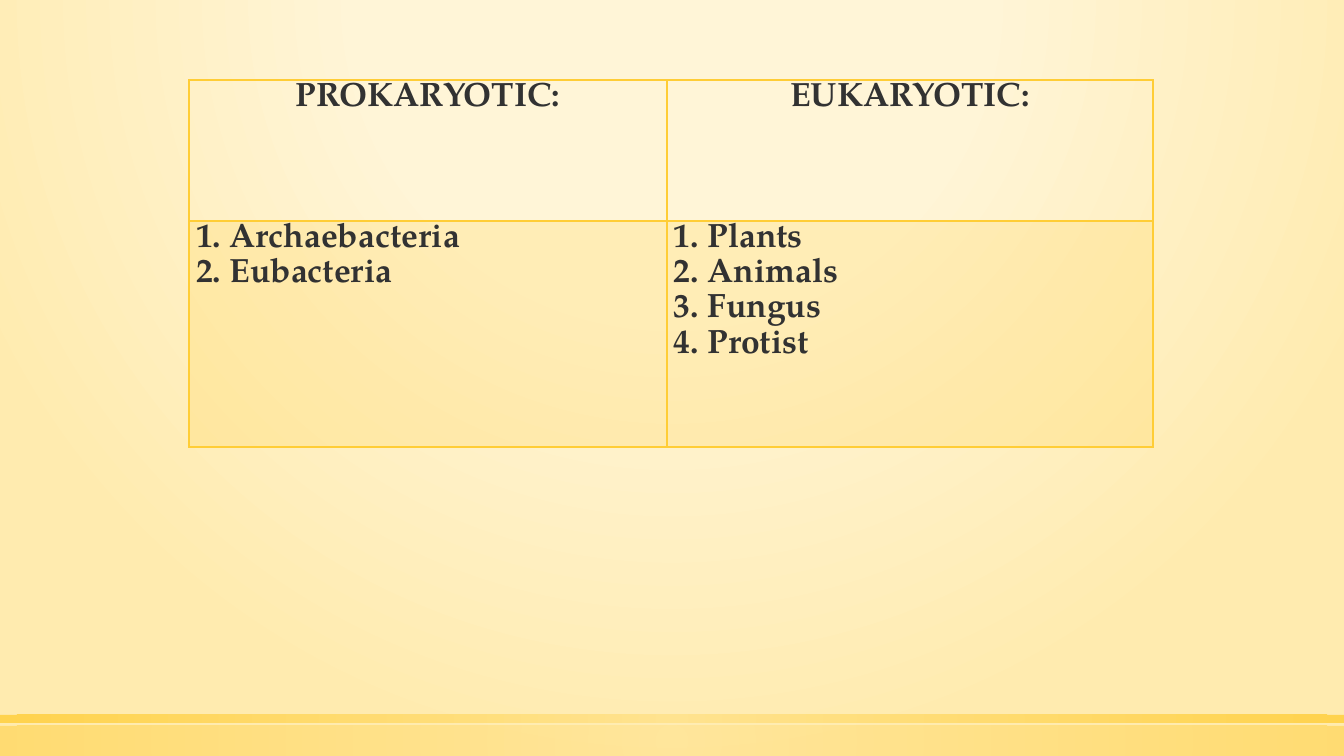
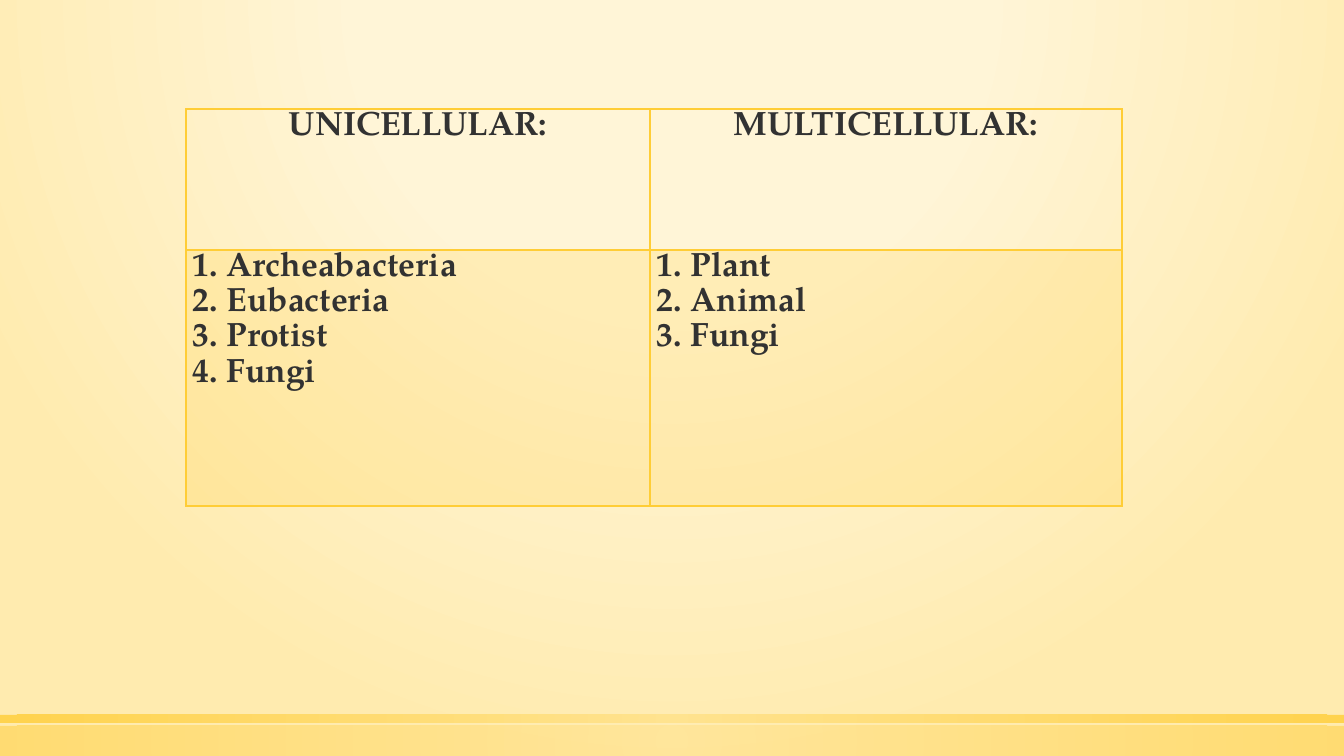
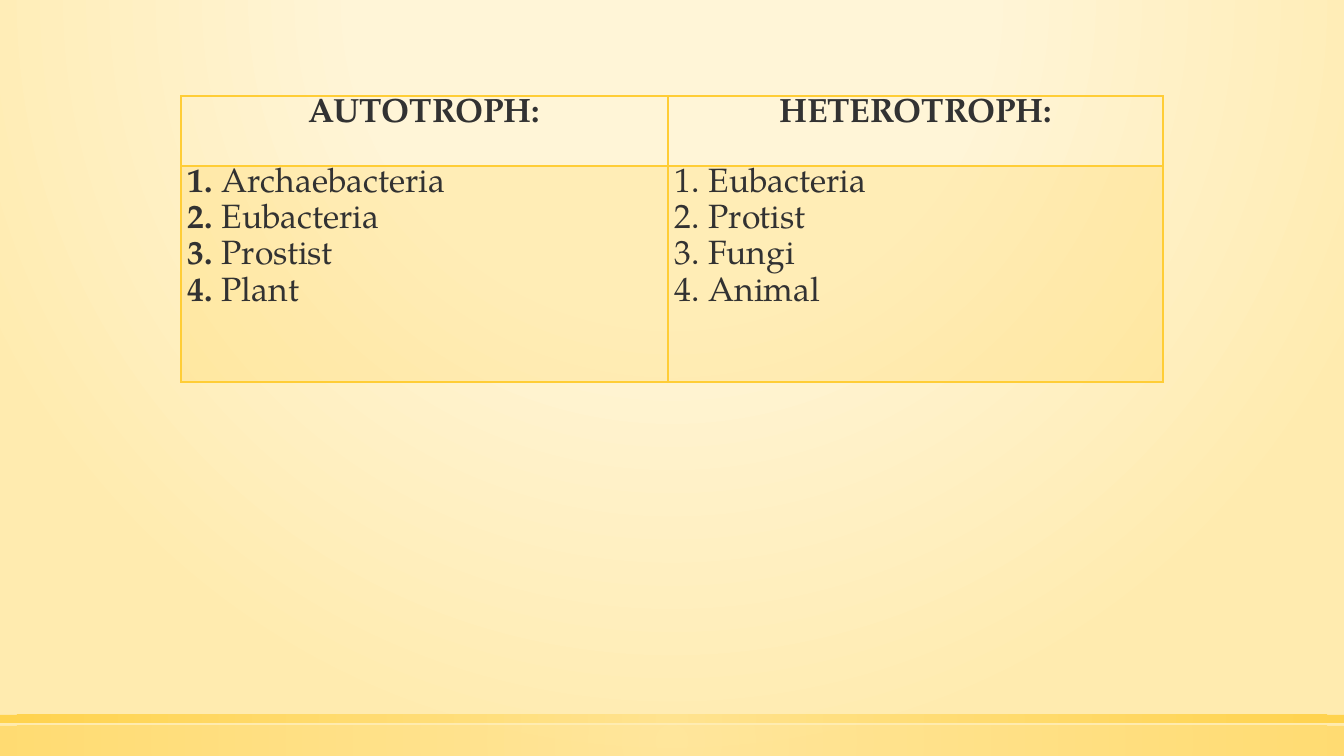
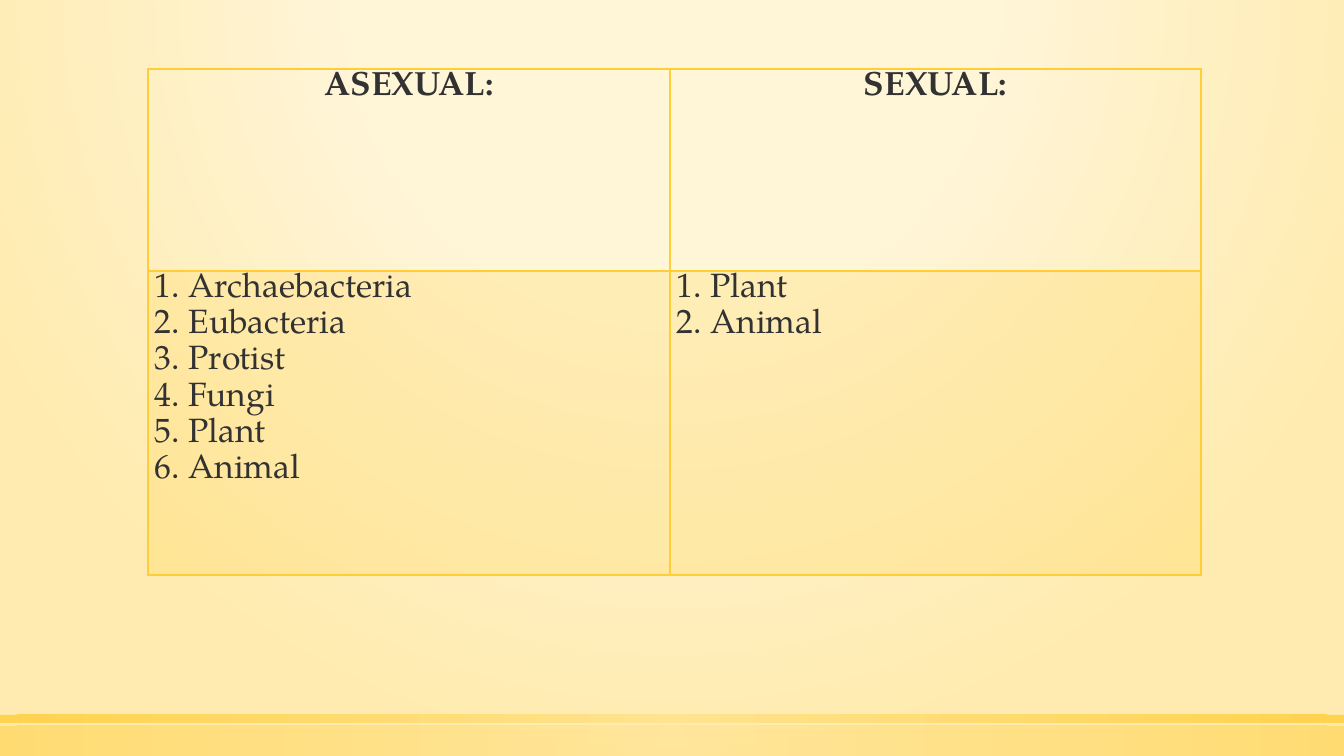
from dataclasses import dataclass

import lxml.etree
import pptx
import pptx.dml.color
import pptx.enum.shapes
import pptx.enum.text
import pptx.oxml.ns
import pptx.util

EMU_PER_INCH = 914400
PX_PER_INCH = 100.8
SLIDE_W, SLIDE_H = 1344, 756

# Shared style
FONT = "TeX Gyre Pagella"
FONT_SIZE = 24
LINE_SPACING = 1.07
CELL_MARGIN = 7
INK = "323232"
GOLD = "FFCD36"
PALE_GOLD = "FFE186"
CREAM = "FFF5D7"
SAND = "FFEBAF"
BODY_OPACITY = 20
THIN, THICK = 1, 2


@dataclass(frozen=True)
class Stop:
    position: int
    color: str
    opacity: int = 100


@dataclass(frozen=True)
class Band:
    top: int
    height: int
    opacity: int


@dataclass(frozen=True)
class Group:
    heading: str
    members: tuple[str, ...]
    bold_numbers: bool = False
    bold_members: bool = False


@dataclass(frozen=True)
class Comparison:
    left: int
    top: int
    widths: tuple[int, int]
    heights: tuple[int, int]
    groups: tuple[Group, Group]


BACKDROP = (Stop(0, CREAM, 59), Stop(40, CREAM, 66), Stop(100, SAND))
BACKDROP_FOCUS = (50, -80, 50, 180)
BAND_FOCUS = (50, 50, 50, 50)
BANDS = (Band(726, 30, 50), Band(715, 8, 80))

COMPARISONS = (
    Comparison(189, 80, (478, 486), (141, 226), (
        Group("PROKARYOTIC:", ("Archaebacteria", "Eubacteria"), True, True),
        Group("EUKARYOTIC:", ("Plants", "Animals", "Fungus", "Protist"), True, True),
    )),
    Comparison(186, 109, (464, 472), (141, 256), (
        Group("UNICELLULAR:", ("Archeabacteria", "Eubacteria", "Protist", "Fungi"), True, True),
        Group("MULTICELLULAR:", ("Plant", "Animal", "Fungi"), True, True),
    )),
    Comparison(181, 96, (487, 495), (70, 216), (
        Group("AUTOTROPH:", ("Archaebacteria", "Eubacteria", "Prostist", "Plant"), True),
        Group("HETEROTROPH:", ("Eubacteria", "Protist", "Fungi", "Animal")),
    )),
    Comparison(148, 69, (522, 531), (202, 304), (
        Group("ASEXUAL:", ("Archaebacteria", "Eubacteria", "Protist", "Fungi", "Plant", "Animal")),
        Group("SEXUAL:", ("Plant", "Animal")),
    )),
)


def px(length: int) -> pptx.util.Emu:
    return pptx.util.Emu(round(length * EMU_PER_INCH / PX_PER_INCH))


def rgb(color: str) -> pptx.dml.color.RGBColor:
    return pptx.dml.color.RGBColor.from_string(color)


def add_element(parent, tag: str, **attributes):
    """Append a child such as a:ln with the given attributes."""
    values = {name: str(value) for name, value in attributes.items()}
    return lxml.etree.SubElement(parent, pptx.oxml.ns.qn(tag), values)


def add_color(parent, color: str, opacity: int = 100) -> None:
    node = add_element(parent, "a:srgbClr", val=color)
    if opacity < 100:
        add_element(node, "a:alpha", val=opacity * 1000)


def set_radial_gradient(fill, owner, stops: tuple[Stop, ...], focus: tuple[int, ...]) -> None:
    """Give the fill, which lives inside owner, a circular gradient."""
    fill.gradient()
    gradient = next(owner.iter(pptx.oxml.ns.qn("a:gradFill")))
    for child in list(gradient):
        gradient.remove(child)
    stop_list = add_element(gradient, "a:gsLst")
    for stop in stops:
        add_color(add_element(stop_list, "a:gs", pos=stop.position * 1000), stop.color, stop.opacity)
    circle = add_element(gradient, "a:path", path="circle")
    sides = {side: value * 1000 for side, value in zip("ltrb", focus)}
    add_element(circle, "a:fillToRect", **sides)


def add_band(slide, band: Band) -> None:
    strip = slide.shapes.add_shape(
        pptx.enum.shapes.MSO_SHAPE.RECTANGLE, 0, px(band.top), px(SLIDE_W), px(band.height))
    strip.shadow.inherit = False
    strip.line.fill.background()
    stops = (Stop(0, PALE_GOLD, band.opacity), Stop(100, GOLD, band.opacity))
    set_radial_gradient(strip.fill, strip.element.spPr, stops, BAND_FOCUS)


def set_borders(cell, top: int, bottom: int) -> None:
    properties = cell._tc.get_or_add_tcPr()
    widths = {"a:lnL": THIN, "a:lnR": THIN, "a:lnT": top, "a:lnB": bottom}
    for index, (tag, width) in enumerate(widths.items()):
        edge = add_element(properties, tag, w=pptx.util.Pt(width))
        add_color(add_element(edge, "a:solidFill"), GOLD)
        properties.insert(index, edge)


def style_paragraph(paragraph, bold: bool) -> None:
    paragraph.line_spacing = LINE_SPACING
    font = paragraph.font
    font.name, font.size, font.bold = FONT, pptx.util.Pt(FONT_SIZE), bold
    font.color.rgb = rgb(INK)


def set_margins(cell) -> None:
    cell.margin_left = cell.margin_right = px(CELL_MARGIN)
    cell.margin_top = cell.margin_bottom = 0


def fill_heading(cell, group: Group) -> None:
    set_margins(cell)
    cell.fill.background()
    set_borders(cell, THIN, THICK)
    heading = cell.text_frame.paragraphs[0]
    heading.alignment = pptx.enum.text.PP_ALIGN.CENTER
    style_paragraph(heading, True)
    heading.add_run().text = group.heading


def fill_members(cell, group: Group) -> None:
    set_margins(cell)
    cell.fill.solid()
    cell.fill.fore_color.rgb = rgb(GOLD)
    tint = next(cell._tc.tcPr.iter(pptx.oxml.ns.qn("a:srgbClr")))
    add_element(tint, "a:alpha", val=BODY_OPACITY * 1000)
    set_borders(cell, THICK, THIN)
    frame = cell.text_frame
    for number, member in enumerate(group.members, start=1):
        entry = frame.paragraphs[0] if number == 1 else frame.add_paragraph()
        style_paragraph(entry, group.bold_members)
        label = entry.add_run()
        label.text = f"{number}. "
        if group.bold_numbers == group.bold_members:
            label.text += member
        else:
            label.font.bold = group.bold_numbers
            entry.add_run().text = member


def add_comparison(slide, comparison: Comparison) -> None:
    table = slide.shapes.add_table(
        2, 2, px(comparison.left), px(comparison.top),
        px(sum(comparison.widths)), px(sum(comparison.heights))).table
    table.first_row = table.horz_banding = False
    for row, height in zip(table.rows, comparison.heights):
        row.height = px(height)
    for index, group in enumerate(comparison.groups):
        table.columns[index].width = px(comparison.widths[index])
        fill_heading(table.cell(0, index), group)
        fill_members(table.cell(1, index), group)


def main() -> None:
    deck = pptx.Presentation()
    deck.slide_width, deck.slide_height = px(SLIDE_W), px(SLIDE_H)

    # Backdrop shared by every slide
    master = deck.slide_master
    set_radial_gradient(master.background.fill, master.element, BACKDROP, BACKDROP_FOCUS)

    # One comparison table a slide
    blank = deck.slide_layouts[6]
    for comparison in COMPARISONS:
        slide = deck.slides.add_slide(blank)
        for band in BANDS:
            add_band(slide, band)
        add_comparison(slide, comparison)

    deck.save("out.pptx")


if __name__ == "__main__":
    main()
